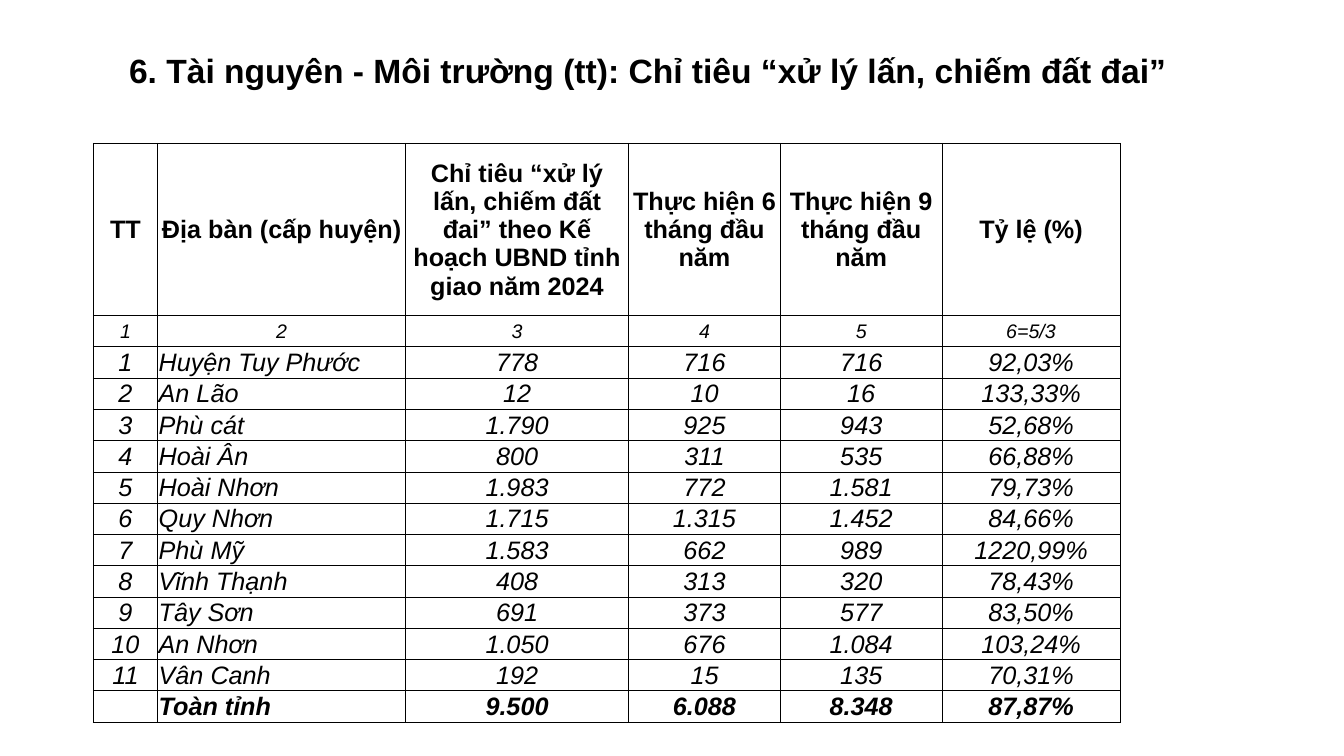
from dataclasses import dataclass

from lxml.etree import SubElement
from pptx import Presentation
from pptx.dml.color import RGBColor
from pptx.enum.text import MSO_ANCHOR, MSO_AUTO_SIZE, PP_ALIGN
from pptx.oxml.ns import qn
from pptx.slide import Slide
from pptx.table import _Cell
from pptx.text.text import _Paragraph
from pptx.util import Pt

INK = "000000"
TITLE = "6. Tài nguyên - Môi trường (tt): Chỉ tiêu “xử lý lấn, chiếm đất đai”"
COLUMN_WIDTHS = (46.08, 177.12, 159.12, 108.72, 115.2, 127.44)
HEADER_HEIGHT = 123.12
ROW_HEIGHT = 22.32
NAME_COLUMN = 1


@dataclass(frozen=True)
class TextStyle:
    size: float
    bold: bool = False
    italic: bool = False


@dataclass(frozen=True)
class TableRow:
    texts: tuple[str, ...]
    style: TextStyle
    height: float = ROW_HEIGHT
    names_left: bool = True


TITLE_STYLE = TextStyle(24, bold=True)
HEADER_STYLE = TextStyle(18, bold=True)
INDEX_STYLE = TextStyle(14, italic=True)
DISTRICT_STYLE = TextStyle(18, italic=True)
TOTAL_STYLE = TextStyle(18, bold=True, italic=True)

HEADER = (
    "TT",
    "Địa bàn (cấp huyện)",
    "Chỉ tiêu “xử lý lấn, chiếm đất đai” theo Kế hoạch UBND tỉnh giao năm 2024",
    "Thực hiện 6 tháng đầu năm",
    "Thực hiện 9 tháng đầu năm",
    "Tỷ lệ (%)",
)
DISTRICTS = (
    ("Huyện Tuy Phước", "778", "716", "716", "92,03%"),
    ("An Lão", "12", "10", "16", "133,33%"),
    ("Phù cát", "1.790", "925", "943", "52,68%"),
    ("Hoài Ân", "800", "311", "535", "66,88%"),
    ("Hoài Nhơn", "1.983", "772", "1.581", "79,73%"),
    ("Quy Nhơn", "1.715", "1.315", "1.452", "84,66%"),
    ("Phù Mỹ", "1.583", "662", "989", "1220,99%"),
    ("Vĩnh Thạnh", "408", "313", "320", "78,43%"),
    ("Tây Sơn", "691", "373", "577", "83,50%"),
    ("An Nhơn", "1.050", "676", "1.084", "103,24%"),
    ("Vân Canh", "192", "15", "135", "70,31%"),
)
ROWS = (
    TableRow(HEADER, HEADER_STYLE, HEADER_HEIGHT, names_left=False),
    TableRow(("1", "2", "3", "4", "5", "6=5/3"), INDEX_STYLE, names_left=False),
    *(
        TableRow((str(number), *district), DISTRICT_STYLE)
        for number, district in enumerate(DISTRICTS, start=1)
    ),
    TableRow(("", "Toàn tỉnh", "9.500", "6.088", "8.348", "87,87%"), TOTAL_STYLE),
)


def color(value: str) -> RGBColor:
    return RGBColor.from_string(value)


def write_text(para: _Paragraph, text: str, style: TextStyle, align: PP_ALIGN) -> None:
    para.alignment = align
    para.font.size = Pt(style.size)
    if not text:
        return
    span = para.add_run()
    span.text = text
    span.font.name = "Arial"
    span.font.size = Pt(style.size)
    span.font.bold = style.bold
    span.font.italic = style.italic
    span.font.color.rgb = color(INK)


def draw_borders(cell: _Cell) -> None:
    properties = cell._tc.get_or_add_tcPr()
    for side in ("a:lnL", "a:lnR", "a:lnT", "a:lnB"):
        line = SubElement(properties, qn(side), w=str(Pt(0.5)))
        fill = SubElement(line, qn("a:solidFill"))
        SubElement(fill, qn("a:srgbClr"), val=str(color(INK)))


def draw_title(page: Slide) -> None:
    box = page.shapes.title
    box.left, box.top, box.width, box.height = Pt(84.96), Pt(31.68), Pt(794.16), Pt(36)
    frame = box.text_frame
    frame.word_wrap = True
    frame.auto_size = MSO_AUTO_SIZE.SHAPE_TO_FIT_TEXT
    frame.vertical_anchor = MSO_ANCHOR.TOP
    write_text(frame.paragraphs[0], TITLE, TITLE_STYLE, PP_ALIGN.LEFT)


def draw_cell(cell: _Cell, text: str, style: TextStyle, align: PP_ALIGN) -> None:
    cell.margin_left = cell.margin_right = cell.margin_top = Pt(0.72)
    cell.margin_bottom = Pt(0)
    cell.vertical_anchor = MSO_ANCHOR.MIDDLE
    write_text(cell.text_frame.paragraphs[0], text, style, align)
    draw_borders(cell)
    cell.fill.background()


def draw_table(page: Slide) -> None:
    box = page.shapes.add_table(
        len(ROWS),
        len(COLUMN_WIDTHS),
        Pt(66.6),
        Pt(102.24),
        Pt(sum(COLUMN_WIDTHS)),
        Pt(sum(row.height for row in ROWS)),
    )
    table = box.table
    table.first_row = False
    table.horz_banding = False
    for column, width in zip(table.columns, COLUMN_WIDTHS):
        column.width = Pt(width)
    for row_number, row in enumerate(ROWS):
        table.rows[row_number].height = Pt(row.height)
        for column_number, text in enumerate(row.texts):
            is_name = row.names_left and column_number == NAME_COLUMN
            align = PP_ALIGN.LEFT if is_name else PP_ALIGN.CENTER
            draw_cell(table.cell(row_number, column_number), text, row.style, align)


def main() -> None:
    deck = Presentation()
    deck.slide_width, deck.slide_height = Pt(960), Pt(540)
    page = deck.slides.add_slide(deck.slide_layouts.get_by_name("Title Only"))
    draw_title(page)
    draw_table(page)
    deck.save("out.pptx")


if __name__ == "__main__":
    main()
